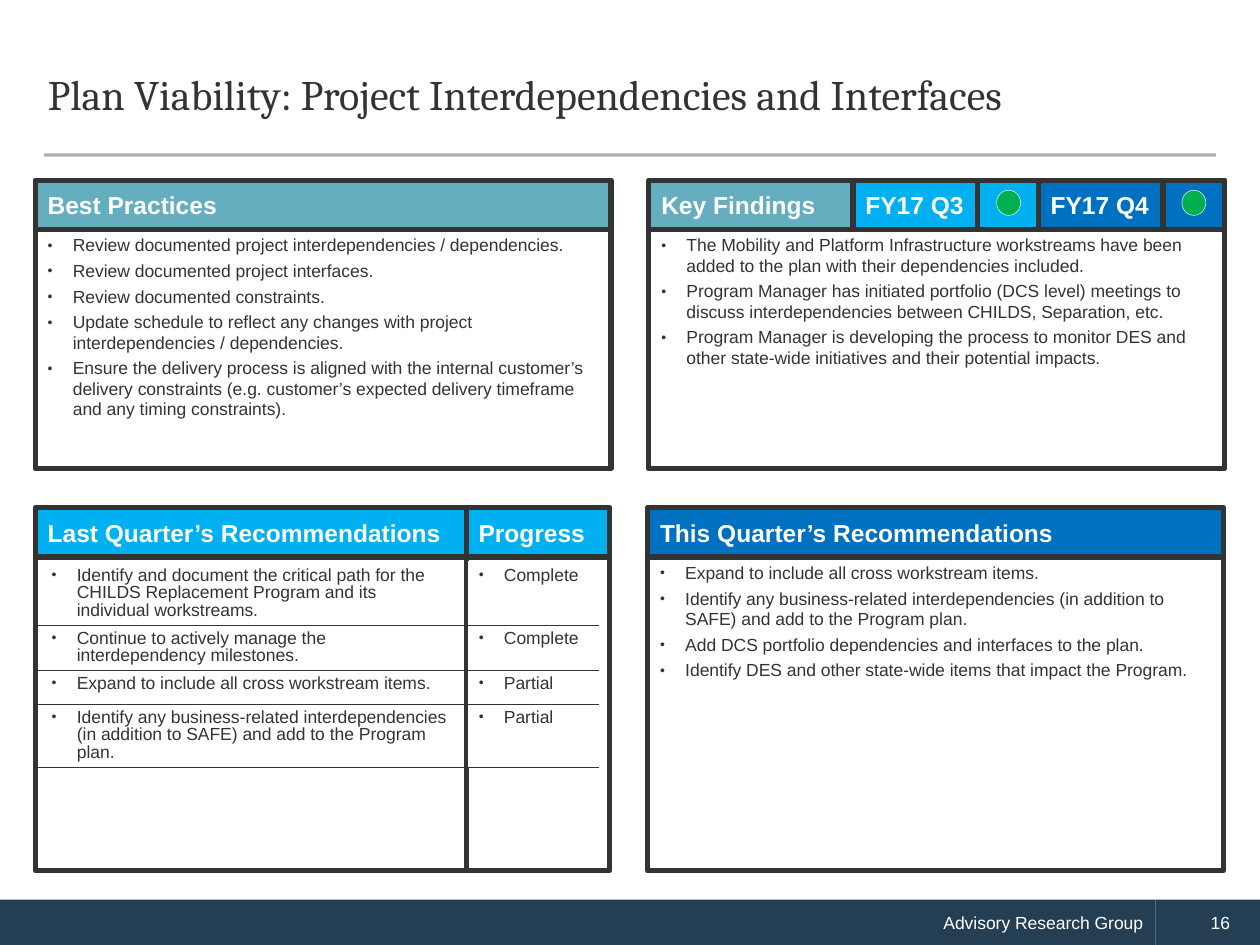
from lxml import etree
from pptx import Presentation
from pptx.dml.color import RGBColor
from pptx.enum.shapes import MSO_CONNECTOR, MSO_SHAPE
from pptx.enum.text import MSO_ANCHOR, MSO_AUTO_SIZE, PP_ALIGN
from pptx.oxml.ns import qn
from pptx.util import Pt

RECTANGLE, OVAL = MSO_SHAPE.RECTANGLE, MSO_SHAPE.OVAL
MIDDLE, TOP = MSO_ANCHOR.MIDDLE, MSO_ANCHOR.TOP
LEFT, CENTER, RIGHT = PP_ALIGN.LEFT, PP_ALIGN.CENTER, PP_ALIGN.RIGHT

PX = 9144  # EMU per px, 100 px to the inch

WHITE = RGBColor(0xFF, 0xFF, 0xFF)
INK = RGBColor(0x33, 0x33, 0x33)
NAVY = RGBColor(0x24, 0x3F, 0x54)
TEAL = RGBColor(0x65, 0xAE, 0xBF)
SKY = RGBColor(0x00, 0xB0, 0xF0)
BLUE = RGBColor(0x00, 0x70, 0xC0)
GREEN = RGBColor(0x00, 0xB0, 0x50)
RULE_GREY = RGBColor(0x45, 0x43, 0x3E)

presentation = Presentation()
presentation.slide_width, presentation.slide_height = 1000 * PX, 750 * PX
slide = presentation.slides.add_slide(presentation.slide_layouts[5])


def add_box(bounds, fill, text="", size=14, kind=RECTANGLE, line=INK, width=3):
    shape = slide.shapes.add_shape(kind, *[value * PX for value in bounds])
    shape.shadow.inherit = False
    shape.fill.solid()
    shape.fill.fore_color.rgb = fill
    if line is None:
        shape.line.fill.background()
    else:
        shape.line.color.rgb = line
        shape.line.width = Pt(width)
    shape.text_frame.vertical_anchor = MIDDLE
    if text:
        shape.text_frame.text = text
        paragraph = shape.text_frame.paragraphs[0]
        paragraph.alignment = LEFT
        paragraph.font.name = "Arial"
        paragraph.font.size = Pt(size)
        paragraph.font.bold = size == 14
        paragraph.font.color.rgb = WHITE
    return shape


def write_bullets(text_frame, items, spacing):
    text_frame.text = "\n".join(items)
    for index, paragraph in enumerate(text_frame.paragraphs):
        properties = paragraph._p.get_or_add_pPr()
        properties.set("marL", str(20 * PX))
        properties.set("indent", str(-20 * PX))
        etree.SubElement(properties, qn("a:buSzPct"), val="80000")
        etree.SubElement(properties, qn("a:buFont"), typeface="Arial")
        etree.SubElement(properties, qn("a:buChar"), char="•")
        paragraph.alignment = LEFT
        paragraph.line_spacing = spacing
        paragraph.space_before = Pt(3 if index else 0)
        for run in paragraph.runs:
            run.font.name = "Arial"
            run.font.size = Pt(10)
            run.font.color.rgb = INK


# Footer bar
for left, width, text, alignment, indent in [
    (0, 917, "Advisory Research Group", RIGHT, 29),
    (917, 83, "16", CENTER, 20),
]:
    footer = add_box((left, 714, width, 36), NAVY, text, size=10, line=None)
    paragraph = footer.text_frame.paragraphs[0]
    paragraph.alignment = alignment
    paragraph._p.get_or_add_pPr().set("marL", str(indent * PX))

# Title and rule
title = slide.shapes.title
title.left, title.top, title.width, title.height = [value * PX for value in (28, 29, 943, 94)]
title.text_frame.text = "Plan Viability: Project Interdependencies and Interfaces"
title.text_frame.auto_size = MSO_AUTO_SIZE.NONE
title.text_frame.vertical_anchor = MIDDLE
paragraph = title.text_frame.paragraphs[0]
paragraph.alignment = LEFT
paragraph.line_spacing = Pt(26)
paragraph.font.name = "Cambria"
paragraph.font.size = Pt(24)
paragraph.font.color.rgb = INK

rule = slide.shapes.add_connector(MSO_CONNECTOR.STRAIGHT, 35 * PX, 123 * PX, 965 * PX, 123 * PX)
rule.line.color.rgb = RULE_GREY
rule.line.width = Pt(1.75)
color = rule.line._ln.find(".//" + qn("a:srgbClr"))
etree.SubElement(color, qn("a:alpha"), val="42000")
etree.SubElement(rule._element.spPr, qn("a:effectLst"))

# Panels: left, top, width, body height, header colour, heading, bullets
HEADER = 39
panels = [
    (28, 403, 342, 249, SKY, "Last Quarter’s Recommendations", []),
    (370, 403, 114, 249, SKY, "Progress", []),
    (514, 403, 457, 249, BLUE, "This Quarter’s Recommendations", [
        "Expand to include all cross workstream items.",
        "Identify any business-related interdependencies (in addition to SAFE) and add to the Program plan.",
        "Add DCS portfolio dependencies and interfaces to the plan.",
        "Identify DES and other state-wide items that impact the Program.",
    ]),
    (28, 143, 457, 190, TEAL, "Best Practices", [
        "Review documented project interdependencies / dependencies.",
        "Review documented project interfaces.",
        "Review documented constraints.",
        "Update schedule to reflect any changes with project interdependencies / dependencies.",
        "Ensure the delivery process is aligned with the internal customer’s delivery constraints "
        "(e.g. customer’s expected delivery timeframe and any timing constraints).",
    ]),
    (515, 143, 457, 190, TEAL, "Key Findings", [
        "The Mobility and Platform Infrastructure workstreams have been added to the plan "
        "with their dependencies included.",
        "Program Manager has initiated portfolio (DCS level) meetings to discuss "
        "interdependencies between CHILDS, Separation, etc.",
        "Program Manager is developing the process to monitor DES and other state-wide "
        "initiatives and their potential impacts.",
    ]),
]
for left, top, width, height, fill, heading, items in panels:
    body = add_box((left, top + HEADER, width, height), WHITE)
    body.text_frame.vertical_anchor = TOP
    if items:
        write_bullets(body.text_frame, items, 0.97)
    add_box((left, top, width, HEADER), fill, heading)

# Quarter labels with status lights
for left, fill, quarter in [(677, SKY, "FY17 Q3"), (824, BLUE, "FY17 Q4")]:
    add_box((left, 143, 101, HEADER), fill, quarter)
    add_box((left + 99, 143, 49, HEADER), fill)
    add_box((left + 114, 151, 19, 20), GREEN, kind=OVAL, line=WHITE, width=0.25)

# Progress on last quarter's recommendations
progress_rows = [
    (50, "Identify and document the critical path for the CHILDS Replacement Program "
         "and its individual workstreams.", "Complete"),
    (36, "Continue to actively manage the interdependency milestones.", "Complete"),
    (27, "Expand to include all cross workstream items.", "Partial"),
    (50, "Identify any business-related interdependencies (in addition to SAFE) "
         "and add to the Program plan.", "Partial"),
]
frame = slide.shapes.add_table(len(progress_rows), 2, 31 * PX, 446 * PX, 444 * PX, 163 * PX)
table = frame.table
table.first_row = table.horz_banding = False
table.columns[0].width, table.columns[1].width = 339 * PX, 105 * PX
edge, divider, hairline = (WHITE, 1), (INK, 3), (INK, 0.25)
for row_index, (height, *texts) in enumerate(progress_rows):
    table.rows[row_index].height = height * PX
    for column_index, text in enumerate(texts):
        cell = table.cell(row_index, column_index)
        cell.margin_left = cell.margin_right = 10 * PX
        cell.margin_top = cell.margin_bottom = 4 * PX
        write_bullets(cell.text_frame, [text], 0.9)
        borders = {
            "a:lnL": divider if column_index else edge,
            "a:lnR": edge if column_index else divider,
            "a:lnT": hairline if row_index else edge,
            "a:lnB": hairline,
        }
        for tag, (color, width) in borders.items():
            border = etree.SubElement(cell._tc.get_or_add_tcPr(), qn(tag), w=str(Pt(width)))
            solid = etree.SubElement(border, qn("a:solidFill"))
            etree.SubElement(solid, qn("a:srgbClr"), val=str(color))
        cell.fill.solid()
        cell.fill.fore_color.rgb = WHITE

presentation.save("out.pptx")
